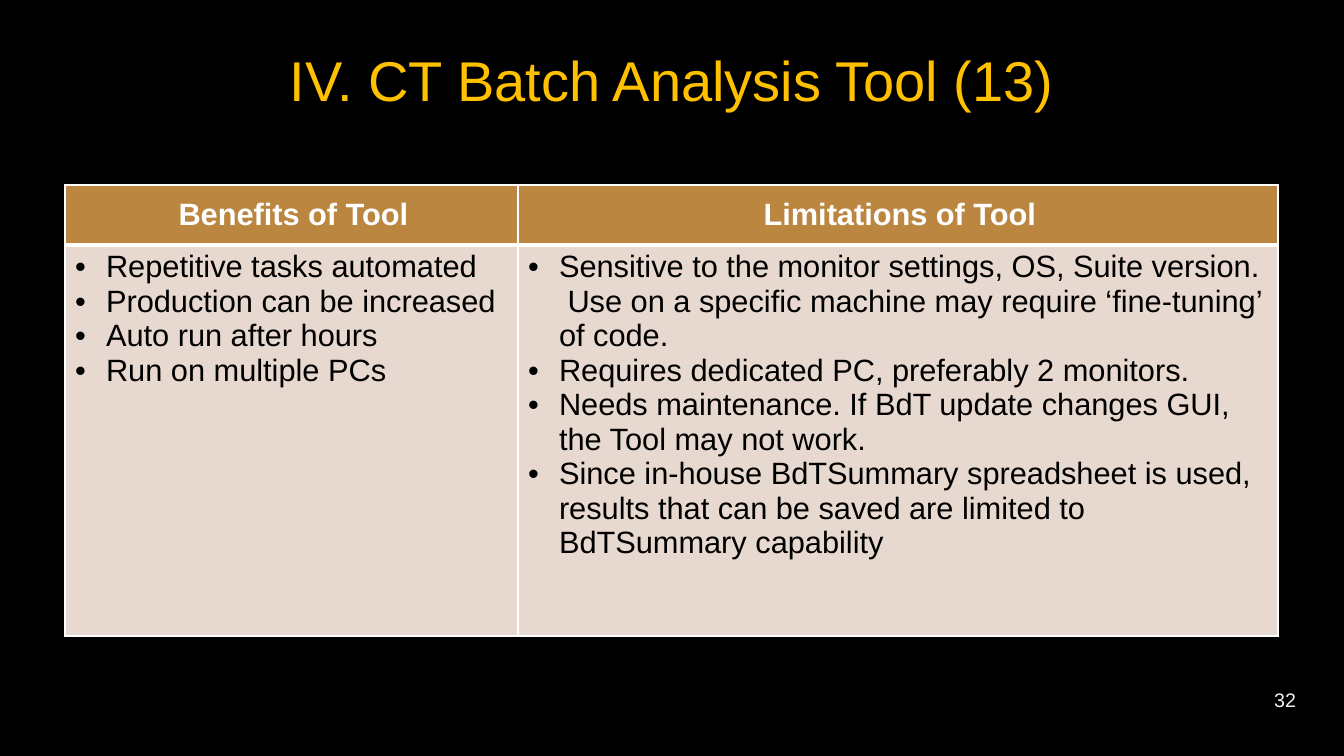
from dataclasses import dataclass

from lxml import etree
from pptx import Presentation
from pptx.dml.color import RGBColor
from pptx.enum.text import MSO_ANCHOR, PP_ALIGN
from pptx.oxml.ns import qn
from pptx.util import Pt

CENTER, LEFT, RIGHT = PP_ALIGN.CENTER, PP_ALIGN.LEFT, PP_ALIGN.RIGHT
MIDDLE, TOP = MSO_ANCHOR.MIDDLE, MSO_ANCHOR.TOP

TITLE = "IV. CT Batch Analysis Tool (13)"
PAGE_NUMBER = "32"
COLUMNS = [
    ("Benefits of Tool", 453, [
        "Repetitive tasks automated",
        "Production can be increased",
        "Auto run after hours",
        "Run on multiple PCs",
    ]),
    ("Limitations of Tool", 760, [
        "Sensitive to the monitor settings, OS, Suite version.  Use on a specific "
        "machine may require ‘fine-tuning’ of code.",
        "Requires dedicated PC, preferably 2 monitors.",
        "Needs maintenance. If BdT update changes GUI, the Tool may not work.",
        "Since in-house BdTSummary spreadsheet is used, results that can be saved "
        "are limited to BdTSummary capability",
    ]),
]

SLIDE_SIZE = (1344, 756)
TITLE_BOX = (101, 26, 1141, 107)
TABLE_ORIGIN = (65, 185)
ROW_HEIGHTS = (60, 391)
NUMBER_BOX = (1223, 680, 83, 40)
HEADER_INDENT = 4
BULLET_INDENT = 31
EMU_PER_PX = 12192000 / SLIDE_SIZE[0]


@dataclass(frozen=True)
class Theme:
    font: str = "Arial"
    background: str = "000000"
    title: str = "FFC000"
    header_fill: str = "BB8640"
    header_text: str = "FFFFFF"
    body_fill: str = "E7D9CF"
    body_text: str = "000000"
    border: str = "FFFFFF"
    number: str = "F2F2F2"
    title_size: int = 40
    table_size: int = 22
    number_size: int = 14
    thin: int = 1
    thick: int = 3


THEME = Theme()


def px(length):
    return round(length * EMU_PER_PX)


def place(shape, box):
    shape.left, shape.top, shape.width, shape.height = map(px, box)


def write(paragraph, text, size, color, align, bold=False):
    paragraph.alignment = align
    run = paragraph.add_run()
    run.text = text
    font = run.font
    font.name, font.size, font.bold = THEME.font, Pt(size), bold
    font.color.rgb = RGBColor.from_string(color)


def indent(paragraph, margin, hanging=0):
    properties = paragraph._p.get_or_add_pPr()
    properties.set("marL", str(px(margin)))
    properties.set("indent", str(-px(hanging)))
    return properties


def add_bullet(paragraph):
    properties = indent(paragraph, BULLET_INDENT, BULLET_INDENT)
    etree.SubElement(properties, qn("a:buFont"), typeface=THEME.font)
    etree.SubElement(properties, qn("a:buChar"), char="•")


def style_cell(cell, fill, anchor, top_width, bottom_width):
    cell.vertical_anchor = anchor
    properties = cell._tc.get_or_add_tcPr()
    widths = {"lnL": THEME.thin, "lnR": THEME.thin, "lnT": top_width, "lnB": bottom_width}
    for side, width in widths.items():
        line = etree.SubElement(properties, qn(f"a:{side}"), w=str(Pt(width)))
        solid = etree.SubElement(line, qn("a:solidFill"))
        etree.SubElement(solid, qn("a:srgbClr"), val=THEME.border)
    cell.fill.solid()
    cell.fill.fore_color.rgb = RGBColor.from_string(fill)


def add_title(slide):
    title = slide.shapes.title
    place(title, TITLE_BOX)
    title.text_frame.word_wrap = True
    title.text_frame.vertical_anchor = MIDDLE
    write(title.text_frame.paragraphs[0], TITLE, THEME.title_size, THEME.title, CENTER)


def add_comparison(slide):
    box = (*TABLE_ORIGIN, sum(width for _, width, _ in COLUMNS), sum(ROW_HEIGHTS))
    table = slide.shapes.add_table(len(ROW_HEIGHTS), len(COLUMNS), *map(px, box)).table
    table.horz_banding = False
    for row, height in zip(table.rows, ROW_HEIGHTS):
        row.height = px(height)
    for index, (heading, width, points) in enumerate(COLUMNS):
        table.columns[index].width = px(width)
        header, body = table.cell(0, index), table.cell(1, index)
        style_cell(header, THEME.header_fill, MIDDLE, THEME.thin, THEME.thick)
        style_cell(body, THEME.body_fill, TOP, THEME.thick, THEME.thin)
        paragraph = header.text_frame.paragraphs[0]
        indent(paragraph, HEADER_INDENT)
        write(paragraph, heading, THEME.table_size, THEME.header_text, CENTER, True)
        frame = body.text_frame
        for number, point in enumerate(points):
            paragraph = frame.add_paragraph() if number else frame.paragraphs[0]
            add_bullet(paragraph)
            write(paragraph, point, THEME.table_size, THEME.body_text, LEFT)


def add_page_number(slide):
    frame = slide.shapes.add_textbox(*map(px, NUMBER_BOX)).text_frame
    frame.word_wrap = True
    frame.vertical_anchor = MIDDLE
    write(frame.paragraphs[0], PAGE_NUMBER, THEME.number_size, THEME.number, RIGHT)


def main():
    presentation = Presentation()
    presentation.slide_width, presentation.slide_height = map(px, SLIDE_SIZE)
    slide = presentation.slides.add_slide(presentation.slide_layouts.get_by_name("Title Only"))
    background = slide.background.fill
    background.solid()
    background.fore_color.rgb = RGBColor.from_string(THEME.background)
    add_title(slide)
    add_comparison(slide)
    add_page_number(slide)
    presentation.save("out.pptx")


if __name__ == "__main__":
    main()
